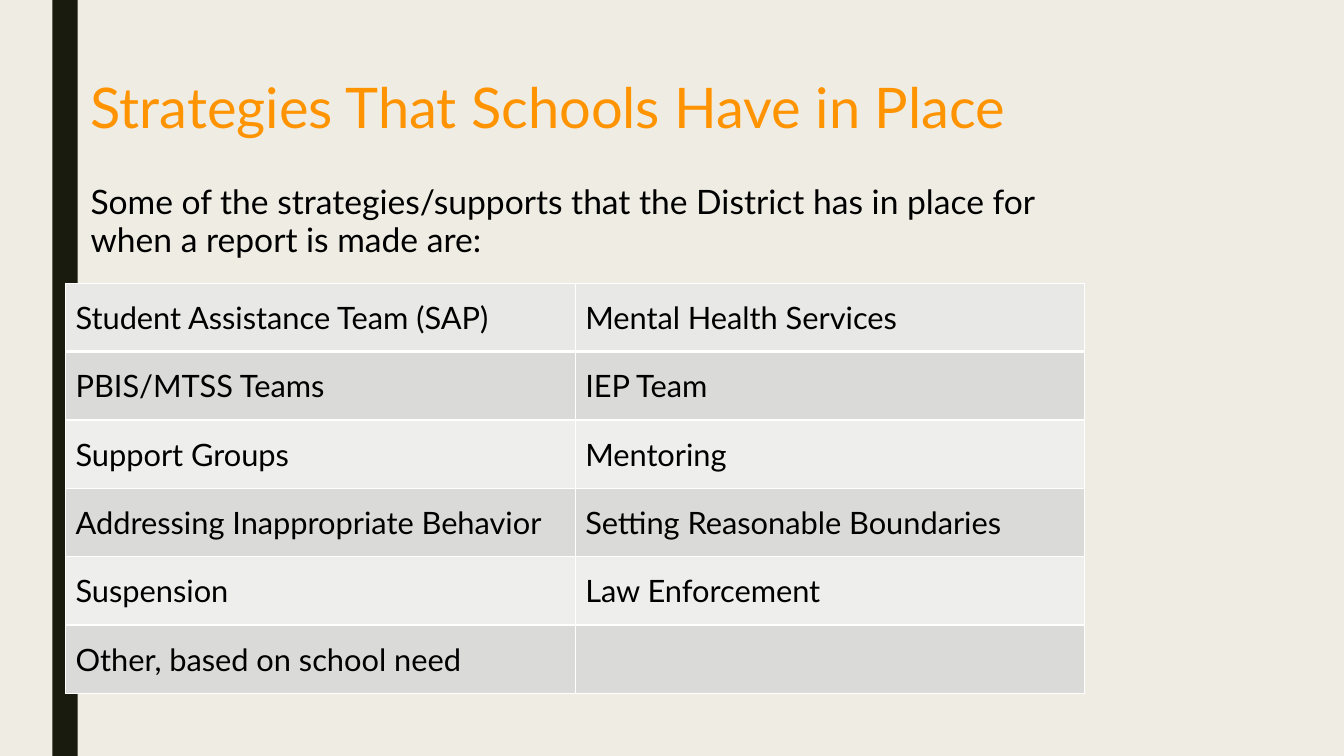
from pptx import Presentation
from pptx import util as u
from pptx.dml.color import RGBColor
from pptx.enum import shapes, text
from pptx.oxml import parse_xml
from pptx.oxml.ns import nsdecls

HUES = {
    "back": "EFEDE3",
    "bar": "191B0E",
    "title": "FF9300",
    "ink": "000000",
    "head": "E8E8E7",
    "dark": "DADBD9",
    "light": "EEEEED",
    "rule": "FFFFFF",
}

ROWS = [
    ("Student Assistance Team (SAP)", "Mental Health Services"),
    ("PBIS/MTSS Teams", "IEP Team"),
    ("Support Groups", "Mentoring"),
    ("Addressing Inappropriate Behavior", "Setting Reasonable Boundaries"),
    ("Suspension", "Law Enforcement"),
    ("Other, based on school need", ""),
]


class Deck:
    font = "Lato"

    def __init__(self, wide, high):
        self.prs = Presentation()
        self.prs.slide_width = u.Inches(wide)
        self.prs.slide_height = u.Inches(high)
        self.slide = self.prs.slides.add_slide(self.prs.slide_layouts[5])
        self.paint(self.slide.background.fill, "back")

    def paint(self, fill, hue):
        fill.solid()
        fill.fore_color.rgb = RGBColor.from_string(HUES[hue])

    def label(self, frame, words, size, hue, space=None):
        para = frame.paragraphs[0]
        para.alignment = text.PP_ALIGN.LEFT
        if space:
            para.line_spacing = space
        run = para.add_run()
        run.text = words
        run.font.name = self.font
        run.font.size = u.Pt(size)
        run.font.color.rgb = RGBColor.from_string(HUES[hue])
        return para

    def frame(self, shape):
        frame = shape.text_frame
        frame.word_wrap = True
        frame.auto_size = text.MSO_AUTO_SIZE.NONE
        frame.vertical_anchor = text.MSO_ANCHOR.TOP
        return frame

    def bar(self, *box):
        bar = self.slide.shapes.add_shape(
            shapes.MSO_SHAPE.RECTANGLE, *map(u.Inches, box))
        bar.shadow.inherit = False
        bar.line.fill.background()
        self.paint(bar.fill, "bar")

    def title(self, words, *box):
        title = self.slide.shapes.title
        title.left, title.top, title.width, title.height = map(u.Inches, box)
        self.label(self.frame(title), words, 40, "title", 0.89)

    def body(self, words, *box):
        area = self.slide.shapes.add_textbox(*map(u.Inches, box))
        para = self.label(self.frame(area), words, 24, "ink", 0.94)
        para.space_after = u.Pt(2)

    def edge(self, cell, side, width):
        cell._tc.get_or_add_tcPr().append(parse_xml(
            f'<a:ln{side} {nsdecls("a")} w="{u.Pt(width)}"><a:solidFill>'
            f'<a:srgbClr val="{HUES["rule"]}"/></a:solidFill></a:ln{side}>'))

    def table(self, rows, *box):
        grid = self.slide.shapes.add_table(
            len(rows), len(rows[0]), *map(u.Inches, box)).table
        for r, row in enumerate(rows):
            hue = ("light", "dark")[r % 2] if r else "head"
            for c, words in enumerate(row):
                cell = grid.cell(r, c)
                cell.vertical_anchor = text.MSO_ANCHOR.MIDDLE
                for side in "LRTB":
                    thick = (r, side) in ((0, "B"), (1, "T"))
                    self.edge(cell, side, 3 if thick else 1)
                self.paint(cell.fill, hue)
                if words:
                    self.label(cell.text_frame, words, 22, "ink")


def main():
    deck = Deck(13.33, 7.5)
    deck.bar(0.52, 0, 0.25, 7.5)
    deck.title("Strategies That Schools Have in Place", 0.8, 0.75, 9.96, 0.89)
    deck.body("Some of the strategies/supports that the District has in place "
              "for when a report is made are:", 0.8, 1.78, 9.96, 0.89)
    deck.table(ROWS, 0.65, 2.81, 10.11, 4.07)
    deck.prs.save("out.pptx")


if __name__ == "__main__":
    main()
